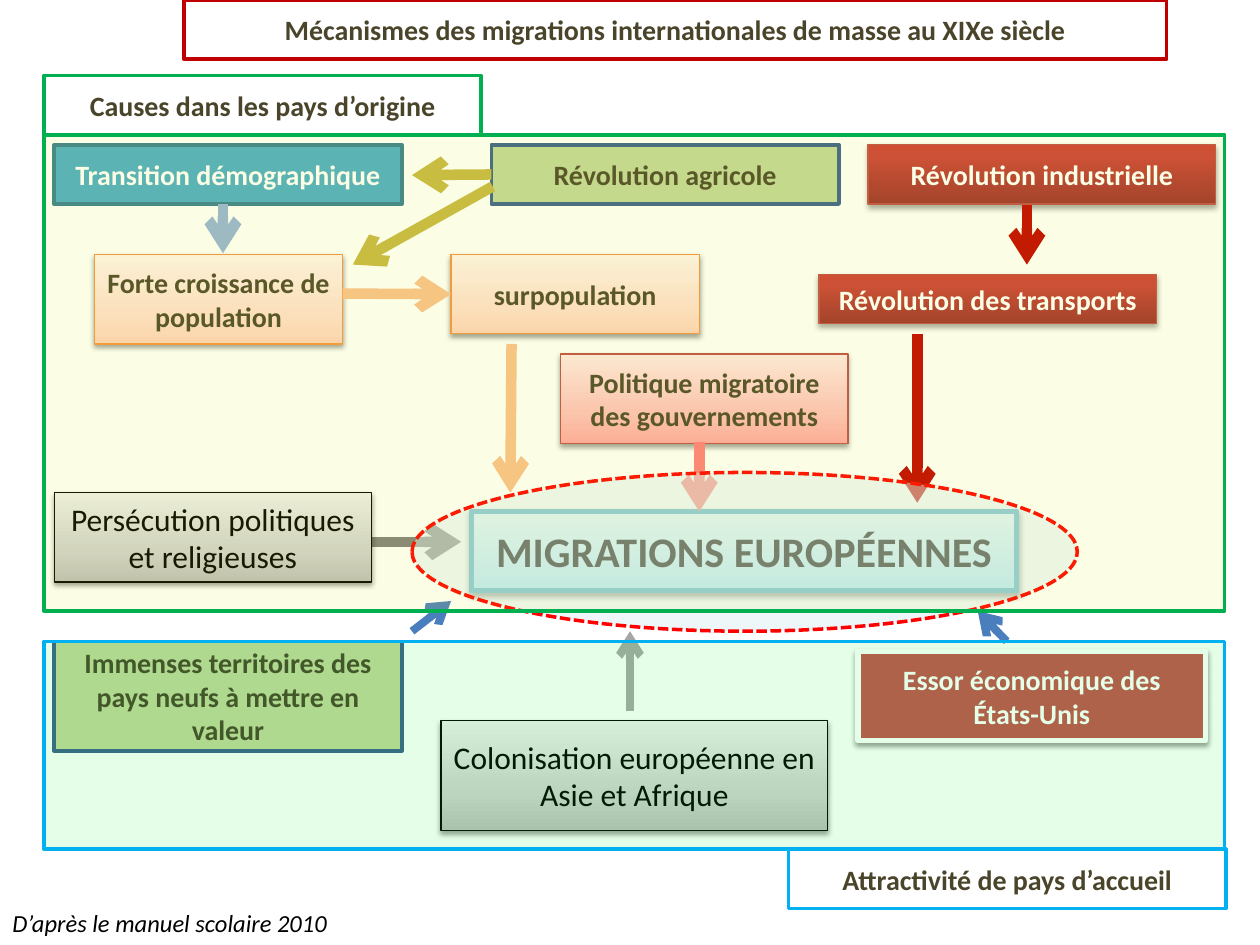
from lxml.etree import SubElement
from pptx import Presentation
from pptx.dml.color import RGBColor
from pptx.enum.dml import MSO_LINE
from pptx.enum.shapes import MSO_CONNECTOR, MSO_SHAPE
from pptx.enum.text import MSO_ANCHOR, MSO_AUTO_SIZE, PP_ALIGN
from pptx.oxml.ns import qn
from pptx.util import Inches, Pt

COLORS = {
    "white": "FFFFFF", "black": "000000", "brown": "4A452A", "red": "C00000",
    "green": "00B050", "blue": "00B0F0", "teal": "4BACC6", "sea": "377F92",
    "leaf": "C3D69B", "navy": "3A5F8C", "brick": "C0504D", "rust": "BF4C48",
    "orange": "F69240", "aqua": "46AAC5", "olive": "C6B746", "peach": "FAC090",
    "grey": "808080", "silver": "A6A6A6", "sky": "95B3D7", "pink": "FF7C80",
    "steel": "4B7EBC", "ice": "DBEEF4", "bright": "FF0000",
    "lemon": "DEF319", "lime": "13F92E",
}
# Gradients, from bottom to top: (position in percent, colour)
BLENDS = {
    "aqua": [(0, "A7E6FF"), (35, "C1EDFF"), (100, "E7F8FF")],
    "red": [(0, "9C2F2D"), (80, "CB3E3A"), (100, "CE3B37")],
    "orange": [(0, "FFD2BD"), (35, "FFDED0"), (100, "FFF2ED")],
    "rose": [(0, "FFA6A5"), (35, "FFC0BF"), (100, "FFE7E7")],
    "grey": [(0, "BDBDBD"), (35, "D1D1D1"), (100, "EEEEEE")],
}
SOFT = (38, 1.6)  # shadow opacity in percent, distance in points
DEEP = (35, 1.8)
# Looks shared by several boxes
WARM = dict(blend="orange", line="orange", width=0.75, shade=SOFT)
HOT = dict(blend="red", line="rust", width=0.75, shade=DEEP, color="white")
DULL = dict(blend="grey", line="black", width=0.75, shade=SOFT,
            color="black", size=18, bold=False)
FIELD = dict(fill="leaf", line="navy")


def rgb(name):
    return RGBColor.from_string(COLORS[name])


def write(frame, text, size=16, color="brown", bold=True, italic=False,
          align=PP_ALIGN.CENTER, anchor=MSO_ANCHOR.MIDDLE, wrap=True):
    frame.word_wrap = wrap
    frame.vertical_anchor = anchor
    par = frame.paragraphs[0]
    par.alignment = align
    run = par.add_run()
    run.text = text
    font = run.font
    font.name, font.size = "Calibri", Pt(size)
    font.bold, font.italic = bold, italic
    font.color.rgb = rgb(color)


def tint(parent, code, alpha=None):
    node = SubElement(parent, qn("a:srgbClr"), val=code)
    if alpha is not None:
        SubElement(node, qn("a:alpha"), val=str(alpha * 1000))


class Board:
    def __init__(self, slide):
        self.slide = slide
        self.shapes = slide.shapes

    def paint(self, shape, fill=None, blend=None, alpha=None, line="black",
              width=2, dash=None, shade=None):
        if blend:
            shape.fill.gradient()
            shape.fill.gradient_angle = 90
            stops = shape._element.spPr.find(".//" + qn("a:gsLst"))
            stops.clear()
            for pos, code in BLENDS[blend]:
                stop = SubElement(stops, qn("a:gs"), pos=str(pos * 1000))
                tint(stop, code)
        else:
            shape.fill.solid()
            shape.fill.fore_color.rgb = rgb(fill)
            if alpha is not None:
                node = shape._element.spPr.find(".//" + qn("a:srgbClr"))
                SubElement(node, qn("a:alpha"), val=str(alpha * 1000))
        shape.line.color.rgb = rgb(line)
        shape.line.width = Pt(width)
        if dash:
            shape.line.dash_style = dash
        shape.shadow.inherit = False
        if shade:
            depth, dist = shade
            effects = shape._element.spPr.find(qn("a:effectLst"))
            cast = SubElement(effects, qn("a:outerShdw"), blurRad=str(Pt(3.1)),
                              dist=str(Pt(dist)), dir="5400000", rotWithShape="0")
            tint(cast, COLORS["black"], depth)

    def title(self, at, text, **look):
        shape = self.shapes.title
        shape.left, shape.top, shape.width, shape.height = map(Inches, at)
        shape.text_frame.auto_size = MSO_AUTO_SIZE.NONE
        write(shape.text_frame, text)
        self.paint(shape, **look)

    def box(self, at, text=None, kind=MSO_SHAPE.RECTANGLE, size=16,
            color="brown", bold=True, **look):
        shape = self.shapes.add_shape(kind, *map(Inches, at))
        self.paint(shape, **look)
        if text:
            write(shape.text_frame, text, size=size, color=color, bold=bold)
        return shape

    def arrow(self, start, end, color, width=6, source=None, target=None):
        link = self.shapes.add_connector(
            MSO_CONNECTOR.STRAIGHT, *map(Inches, start + end))
        if source:
            link.begin_connect(*source)
        if target:
            link.end_connect(*target)
        link.line.color.rgb = rgb(color)
        link.line.width = Pt(width)
        SubElement(link.line._get_or_add_ln(), qn("a:tailEnd"), type="arrow")
        SubElement(link._element.spPr, qn("a:effectLst"))

    def note(self, at, text, **fmt):
        shape = self.shapes.add_textbox(*map(Inches, at))
        write(shape.text_frame, text, **fmt)


def main():
    deck = Presentation()
    deck.slide_width, deck.slide_height = Inches(10), Inches(7.5)
    board = Board(deck.slides.add_slide(deck.slide_layouts[5]))
    box, arrow = board.box, board.arrow

    # Title and panel labels
    board.title((1.46, 0, 7.8, 0.47),
                "Mécanismes des migrations internationales de masse au XIXe siècle",
                fill="white", line="red")
    box((0.35, 0.6, 3.47, 0.47), "Causes dans les pays d’origine",
        fill="white", line="green")
    box((6.26, 6.74, 3.47, 0.47), "Attractivité de pays d’accueil",
        fill="white", line="blue")

    # Central outcome
    box((3.74, 4.06, 4.33, 0.63), "MIGRATIONS EUROPÉENNES", size=24,
        color="black", blend="aqua", line="aqua", width=3, shade=SOFT)

    # Causes in the countries of origin
    box((0.43, 1.15, 2.76, 0.47), "Transition démographique", color="white",
        fill="teal", line="sea")
    farm = box((3.9, 1.15, 2.76, 0.47), "Révolution agricole", **FIELD)
    box((6.89, 1.15, 2.76, 0.47), "Révolution industrielle", **HOT)
    box((6.5, 2.18, 2.68, 0.39), "Révolution des transports", **HOT)
    box((0.75, 2.02, 1.97, 0.71), "Forte croissance de population", **WARM)
    arrow((3.9, 1.39), (3.27, 1.39), "olive", source=(farm, 1))
    arrow((3.91, 1.48), (2.8, 2.1), "olive")
    crowd = box((3.58, 2.02, 1.97, 0.63), "surpopulation", **WARM)
    arrow((2.72, 2.33), (3.58, 2.34), "peach", target=(crowd, 1))
    box((4.45, 2.81, 2.28, 0.71), "Politique migratoire des gouvernements",
        blend="rose", line="rust", width=0.75, shade=SOFT)
    arrow((8.15, 1.63), (8.15, 2.1), "red")
    arrow((7.28, 2.65), (7.28, 3.99), "red")
    arrow((4.06, 2.73), (4.05, 3.91), "peach")
    arrow((2.95, 4.3), (3.66, 4.3), "grey")
    box((0.43, 3.91, 2.52, 0.71), "Persécution politiques et religieuses", **DULL)
    arrow((1.77, 1.62), (1.77, 2.01), "sky")
    arrow((5.55, 3.51), (5.55, 4.06), "pink")

    # Appeal of the host countries
    box((0.43, 5.09, 2.76, 0.87),
        "Immenses territoires des pays neufs à mettre en valeur", **FIELD)
    box((6.81, 5.17, 2.76, 0.71), "Essor économique des États-Unis",
        color="white", fill="brick", line="white", width=3, shade=SOFT)
    box((3.5, 5.72, 3.07, 0.87), "Colonisation européenne en Asie et Afrique",
        **DULL)

    # Halo around the outcome and the arrows that reach it from below
    box((3.27, 3.75, 5.28, 1.26), kind=MSO_SHAPE.OVAL, fill="ice", alpha=49,
        line="bright", dash=MSO_LINE.SQUARE_DOT)
    arrow((3.27, 5.01), (3.58, 4.77), "steel", 4.5)
    arrow((7.99, 5.09), (7.76, 4.85), "steel", 4.5)
    arrow((5, 5.64), (5, 5.01), "silver", 4.5)

    # Translucent panels over both groups
    box((0.35, 1.07, 9.37, 3.78), fill="lemon", alpha=11, line="green")
    box((0.35, 5.09, 9.37, 1.65), fill="lime", alpha=11, line="blue")

    # Credit
    board.note((0, 7.16, 3.11, 0.34), "D’après le manuel scolaire 2010", size=14,
               color="black", bold=False, italic=True, align=PP_ALIGN.LEFT,
               anchor=MSO_ANCHOR.TOP, wrap=False)
    deck.save("out.pptx")


if __name__ == "__main__":
    main()
